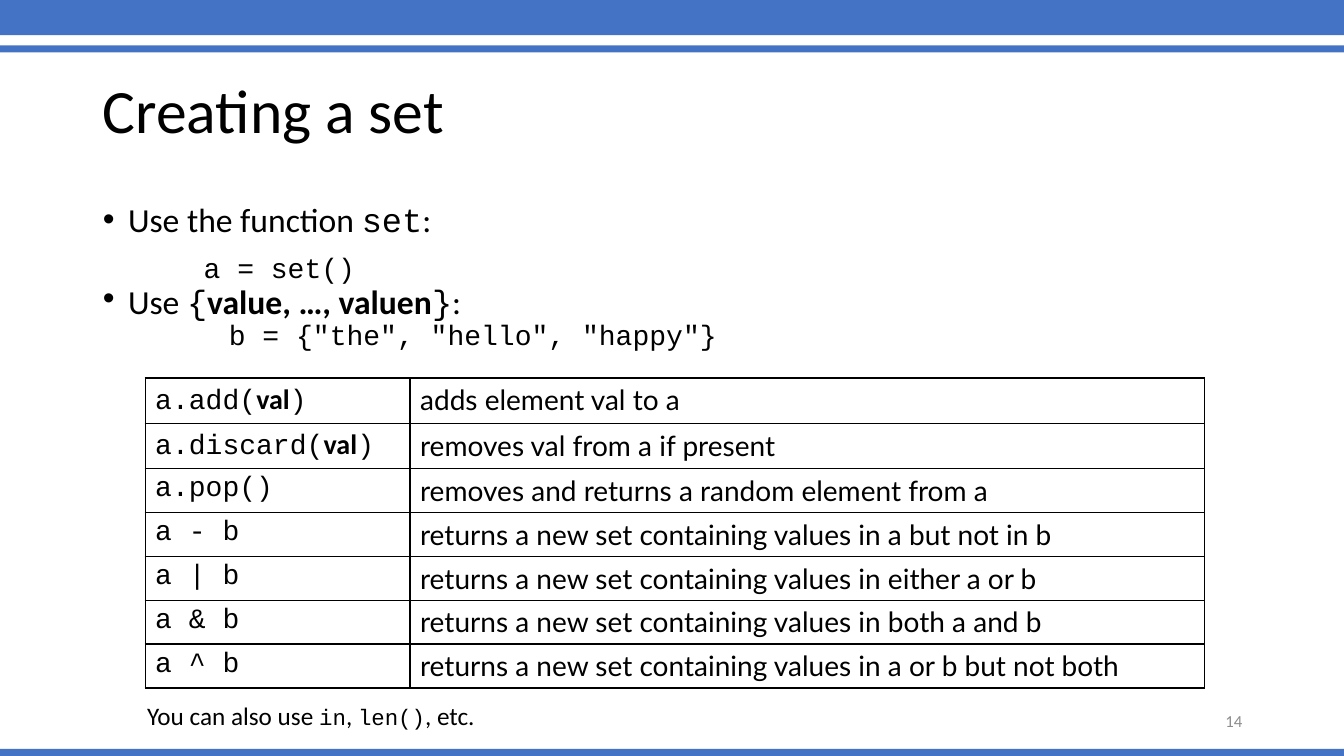
from lxml import etree
from pptx import Presentation
from pptx.dml.color import RGBColor
from pptx.enum.shapes import MSO_SHAPE
from pptx.enum.text import MSO_ANCHOR, MSO_AUTO_SIZE, PP_ALIGN
from pptx.oxml import parse_xml
from pptx.oxml.ns import nsdecls, qn
from pptx.util import Inches, Pt

RECTANGLE = MSO_SHAPE.RECTANGLE
TOP, MIDDLE = MSO_ANCHOR.TOP, MSO_ANCHOR.MIDDLE
LEFT, RIGHT = PP_ALIGN.LEFT, PP_ALIGN.RIGHT
NO_FIT = MSO_AUTO_SIZE.NONE

THEME = {
    "bar": RGBColor.from_string("4472C4"),
    "text": RGBColor.from_string("000000"),
    "muted": RGBColor.from_string("8C8C8C"),
    "border": "000000",
    "sans": "Calibri",
    "mono": "Courier New",
    "cell": "Lato",
    "title": 44,
    "body": 24,
    "code": 20,
    "note": 18,
    "note code": 16,
    "number": 12,
}

presentation = Presentation()
presentation.slide_width = Inches(13.33)
presentation.slide_height = Inches(7.5)
slide = presentation.slides.add_slide(presentation.slide_layouts[1])


def box(left, top, width, height):
    across, down = presentation.slide_width / 100, presentation.slide_height / 100
    return int(left * across), int(top * down), int(width * across), int(height * down)


def write(paragraph, text, size="body", font="sans", bold=False, color="text"):
    run = paragraph.add_run()
    run.text = text
    run.font.size = Pt(THEME[size])
    run.font.name = THEME[font]
    run.font.bold = bold
    run.font.color.rgb = THEME[color]


for top, height in [(0, 4.67), (6, 0.93), (99.07, 0.93)]:
    bar = slide.shapes.add_shape(RECTANGLE, *box(0, top, 100, height))
    bar.shadow.inherit = False
    bar.fill.solid()
    bar.fill.fore_color.rgb = THEME["bar"]
    bar.line.fill.background()

title, body = slide.shapes.title, slide.placeholders[1]
for placeholder, area, anchor in [
    (title, (6.9, 5.33, 86.27, 19.33), MIDDLE),
    (body, (6.9, 26.67, 86.27, 63.47), TOP),
]:
    placeholder.left, placeholder.top, placeholder.width, placeholder.height = box(*area)
    placeholder.text_frame.auto_size = NO_FIT
    placeholder.text_frame.vertical_anchor = anchor

heading = title.text_frame.paragraphs[0]
heading.alignment = LEFT
heading.line_spacing = 0.9
write(heading, "Creating a set", size="title")

code = {"size": "code", "font": "mono"}
mono = {"font": "mono"}
strong = {"bold": True}
body_lines = [
    (True, 0.25, 0.8, 10, [("Use the function ", {}), ("set", mono), (":", {})]),
    (False, 1, 0.8, 13, [("a = set()", code)]),
    (True, 0.25, 0.5, 10, [("Use ", {}), ("{", mono), ("value, …, valuen", strong), ("}", mono), (":", {})]),
    (False, 1.25, 0.5, 10, [('b = {"the", "hello", "happy"}', code)]),
]
for index, (bulleted, indent, spacing, before, pieces) in enumerate(body_lines):
    frame = body.text_frame
    paragraph = frame.add_paragraph() if index else frame.paragraphs[0]
    paragraph.line_spacing = spacing
    paragraph.space_before = Pt(before)
    properties = paragraph._p.get_or_add_pPr()
    properties.set("marL", str(Inches(indent)))
    properties.set("indent", str(Inches(-0.25 if bulleted else 0)))
    if bulleted:
        etree.SubElement(properties, qn("a:buFont")).set("typeface", "Arial")
        etree.SubElement(properties, qn("a:buChar")).set("char", "•")
    else:
        etree.SubElement(properties, qn("a:buNone"))
    for text, style in pieces:
        write(paragraph, text, **style)

argument = ("val", {"size": "code", "bold": True})
operations = [
    ([("a.add(", code), argument, (")", code)], "adds element val to a"),
    ([("a.discard(", code), argument, (")", code)], "removes val from a if present"),
    ([("a.pop()", code)], "removes and returns a random element from a"),
    ([("a - b", code)], "returns a new set containing values in a but not in b"),
    ([("a | b", code)], "returns a new set containing values in either a or b"),
    ([("a & b", code)], "returns a new set containing values in both a and b"),
    ([("a ^ b", code)], "returns a new set containing values in a or b but not both"),
]
table_area = box(10.8, 50, 78.84, 40.4)
table = slide.shapes.add_table(len(operations), 2, *table_area).table
table.first_row = False
table.horz_banding = False
table.columns[0].width = table_area[2] // 4
table.columns[1].width = table_area[2] * 3 // 4
for row, (call, meaning) in enumerate(operations):
    for column, pieces in enumerate([call, [(meaning, {"size": "code", "font": "cell"})]]):
        cell = table.cell(row, column)
        cell.fill.background()
        for text, style in pieces:
            write(cell.text_frame.paragraphs[0], text, **style)
        for position, side in enumerate(["lnL", "lnR", "lnT", "lnB"]):
            border = parse_xml(
                f'<a:{side} {nsdecls("a")} w="{Pt(1)}"><a:solidFill>'
                f'<a:srgbClr val="{THEME["border"]}"/></a:solidFill></a:{side}>'
            )
            cell._tc.get_or_add_tcPr().insert(position, border)

note = slide.shapes.add_textbox(*box(10.2, 92, 26.2, 5.33))
note.text_frame.word_wrap = False
for text, style in [
    ("You can also use ", {"size": "note"}),
    ("in", {"size": "note code", "font": "mono"}),
    (", ", {"size": "note"}),
    ("len()", {"size": "note code", "font": "mono"}),
    (", etc.", {"size": "note"}),
]:
    write(note.text_frame.paragraphs[0], text, **style)

page_number = slide.shapes.add_textbox(*box(70.67, 92.67, 22.5, 5.33))
page_number.text_frame.word_wrap = True
page_number.text_frame.vertical_anchor = MIDDLE
page_number.text_frame.paragraphs[0].alignment = RIGHT
write(page_number.text_frame.paragraphs[0], "14", size="number", color="muted")

presentation.save("out.pptx")
